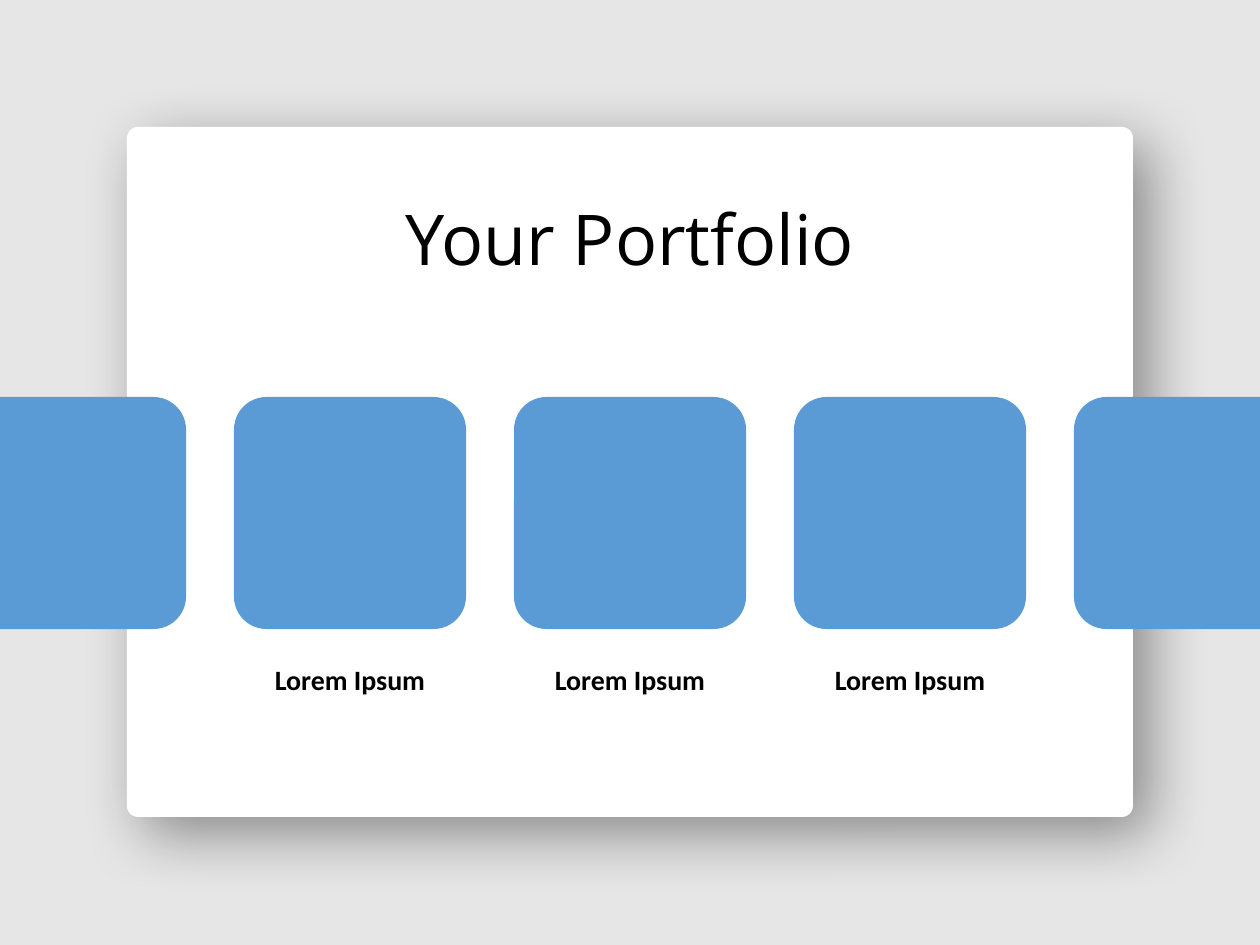
from lxml import etree
from pptx import Presentation, util as u
from pptx.dml.color import RGBColor
from pptx.enum import shapes, text
from pptx.oxml import ns

PX_PER_INCH = 126
SLIDE_WIDTH, SLIDE_HEIGHT = 1260, 945
GREY = RGBColor(0xE7, 0xE6, 0xE6)
WHITE = RGBColor(0xFF, 0xFF, 0xFF)
BLUE = RGBColor(0x5B, 0x9B, 0xD5)
BLACK = RGBColor(0x00, 0x00, 0x00)

TILE_SIZE, TILE_PITCH, TILE_TOP = 232, 280, 397
FIRST_TILE_LEFT = -46
TILE_ORDER = (4, 0, 1, 2, 3)
LABELLED_TILES = (1, 2, 3)
LABEL_WIDTH, LABEL_HEIGHT, LABEL_TOP = 186, 87, 660


def px(length):
    return u.Emu(round(length * u.Inches(1) / PX_PER_INCH))


def add_block(slide, kind, left, top, width, height, color, radius=None):
    shape = slide.shapes.add_shape(kind, px(left), px(top), px(width), px(height))
    shape.shadow.inherit = False
    shape.fill.solid()
    shape.fill.fore_color.rgb = color
    shape.line.fill.background()
    if radius is not None:
        shape.adjustments[0] = radius
    return shape


def add_soft_shadow(shape, blur, distance, angle, opacity):
    effects = shape._element.spPr.find(ns.qn("a:effectLst"))
    shadow = etree.SubElement(
        effects, ns.qn("a:outerShdw"), blurRad=str(u.Pt(blur)),
        dist=str(u.Pt(distance)), dir=str(angle * 60000),
        algn="ctr", rotWithShape="0")
    color = etree.SubElement(shadow, ns.qn("a:srgbClr"), val=str(BLACK))
    etree.SubElement(color, ns.qn("a:alpha"), val=str(opacity * 1000))


def add_text(slide, left, top, width, height, words, font_name, size,
             bold=False, anchor=text.MSO_ANCHOR.TOP, space_before=0):
    box = slide.shapes.add_textbox(px(left), px(top), px(width), px(height))
    frame = box.text_frame
    frame.word_wrap = True
    frame.vertical_anchor = anchor
    paragraph = frame.paragraphs[0]
    paragraph.text = words
    paragraph.alignment = text.PP_ALIGN.CENTER
    paragraph.line_spacing = 0.9
    paragraph.space_before = u.Pt(space_before)
    paragraph.font.name = font_name
    paragraph.font.size = u.Pt(size)
    paragraph.font.bold = bold
    paragraph.font.color.rgb = BLACK


def tile_left(index):
    return FIRST_TILE_LEFT + index * TILE_PITCH


def add_label(slide, index):
    left = tile_left(index) + (TILE_SIZE - LABEL_WIDTH) // 2
    add_text(slide, left, LABEL_TOP, LABEL_WIDTH, LABEL_HEIGHT,
             "Lorem Ipsum", "Calibri", 16, bold=True, space_before=7.5)


def add_tile(slide, index):
    add_block(slide, shapes.MSO_SHAPE.ROUNDED_RECTANGLE, tile_left(index),
              TILE_TOP, TILE_SIZE, TILE_SIZE, BLUE, radius=0.14)


def main():
    presentation = Presentation()
    presentation.slide_width = px(SLIDE_WIDTH)
    presentation.slide_height = px(SLIDE_HEIGHT)
    slide = presentation.slides.add_slide(presentation.slide_layouts[6])

    add_block(slide, shapes.MSO_SHAPE.RECTANGLE, 0, 0, SLIDE_WIDTH, SLIDE_HEIGHT, GREY)
    card = add_block(slide, shapes.MSO_SHAPE.ROUNDED_RECTANGLE,
                     127, 127, 1006, 690, WHITE, radius=0.016)
    add_soft_shadow(card, blur=35, distance=14, angle=45, opacity=40)
    add_text(slide, 127, 160, 1006, 166, "Your Portfolio", "Open Sans", 40,
             anchor=text.MSO_ANCHOR.MIDDLE)
    for index in LABELLED_TILES:
        add_label(slide, index)
    for index in TILE_ORDER:
        add_tile(slide, index)

    presentation.save("out.pptx")


if __name__ == "__main__":
    main()
